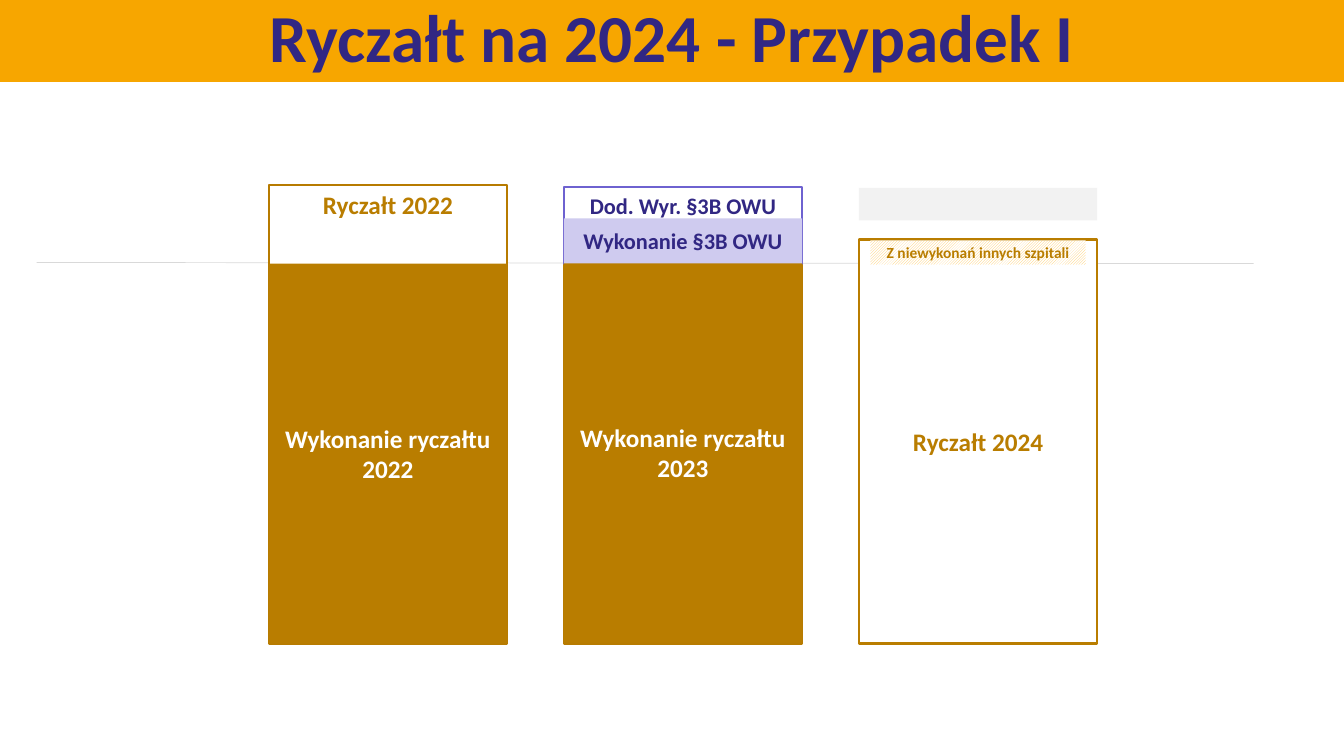
from lxml.etree import SubElement
from pptx import Presentation
from pptx.dml.color import RGBColor
from pptx.enum.dml import MSO_PATTERN
from pptx.enum.shapes import MSO_CONNECTOR, MSO_SHAPE
from pptx.enum.text import MSO_ANCHOR as Anchor, MSO_AUTO_SIZE, PP_ALIGN
from pptx.oxml.ns import qn
from pptx.util import Pt

EMU_PER_PX = 9525
WIDTH, HEIGHT = 1280, 720
FONT = "Calibri"
WHITE = RGBColor(0xFF, 0xFF, 0xFF)
ORANGE = RGBColor(0xF7, 0xA6, 0x00)
NAVY = RGBColor(0x31, 0x27, 0x83)
OCHRE = RGBColor(0xB9, 0x7D, 0x00)
OCHRE_EDGE = RGBColor(0xB7, 0x7B, 0x00)
VIOLET = RGBColor(0x6E, 0x62, 0xD0)
LILAC = RGBColor(0xCF, 0xCB, 0xEF)
HATCH = RGBColor(0xFF, 0xCB, 0x61)
PALE_GREY = RGBColor(0xF2, 0xF2, 0xF2)
RULE_GREY = RGBColor(0xD9, 0xD9, 0xD9)

COLUMN_LEFT, COLUMN_PITCH, COLUMN_WIDTH = 256, 281, 227
COLUMN_BOTTOM = 613
LEVEL = 251


def px(length):
    """Turn pixels into EMU."""
    return length * EMU_PER_PX


def write(shape, text, size, color, anchor):
    """Put one bold centred paragraph into a shape."""
    frame = shape.text_frame
    frame.word_wrap = True
    frame.auto_size = MSO_AUTO_SIZE.NONE
    frame.vertical_anchor = anchor
    paragraph = frame.paragraphs[0]
    paragraph.text = text
    paragraph.alignment = PP_ALIGN.CENTER
    font = paragraph.font
    font.name, font.size, font.bold = FONT, Pt(size), True
    font.color.rgb = color
    return paragraph


def add_block(slide, box, fill=None, edge=None, text="", size=18,
              color=WHITE, anchor=Anchor.MIDDLE):
    """Add a rectangle with optional fill, outline and label."""
    shape = slide.shapes.add_shape(MSO_SHAPE.RECTANGLE, *map(px, box))
    shape.shadow.inherit = False
    if fill is None:
        shape.fill.background()
    else:
        shape.fill.solid()
        shape.fill.fore_color.rgb = fill
    if edge is None:
        shape.line.fill.background()
    else:
        shape.line.color.rgb = edge
        shape.line.width = Pt(1.75)
    if text:
        write(shape, text, size, color, anchor)
    return shape


def add_title(slide, box):
    """Format the title placeholder as a coloured band."""
    title = slide.shapes.title
    title.left, title.top, title.width, title.height = map(px, box)
    title.fill.solid()
    title.fill.fore_color.rgb = ORANGE
    paragraph = write(title, "Ryczałt na 2024 - Przypadek I", 48, NAVY, Anchor.MIDDLE)
    paragraph.line_spacing = 0.9


def add_level_line(slide, left, right):
    """Draw the thin reference line behind the columns."""
    line = slide.shapes.add_connector(
        MSO_CONNECTOR.STRAIGHT, px(left), px(LEVEL - 1), px(right), px(LEVEL))
    line.line.color.rgb = RULE_GREY
    line.line.width = Pt(0.5)
    SubElement(line.element.spPr, qn("a:effectLst"))


def add_column_2022(slide, left, width, bottom):
    """Draw the 2022 lump sum and how much of it was used."""
    top = 176
    add_block(slide, (left, top, width, bottom - top), WHITE, OCHRE_EDGE,
              "Ryczałt 2022", color=OCHRE, anchor=Anchor.TOP)
    add_block(slide, (left, LEVEL, width, bottom - LEVEL), OCHRE,
              text="Wykonanie ryczałtu 2022")


def add_column_2023(slide, left, width, bottom):
    """Draw the 2023 use with the additional §3B parts on top."""
    top, used_top = 178, 208
    body = bottom - LEVEL
    add_block(slide, (left, LEVEL, width, body), edge=OCHRE_EDGE)
    add_block(slide, (left, top, width, LEVEL - top), WHITE, VIOLET,
              "Dod. Wyr. §3B OWU", 16, NAVY, Anchor.TOP)
    add_block(slide, (left, LEVEL - 1, width, body), OCHRE,
              text="Wykonanie ryczałtu 2023")
    add_block(slide, (left, used_top, width, LEVEL - used_top), LILAC,
              text="Wykonanie §3B OWU", size=16, color=NAVY)


def add_column_2024(slide, left, width, bottom):
    """Draw the 2024 lump sum with its hatched share from other hospitals."""
    top, margin = 228, 11
    add_block(slide, (left, top, width, bottom - top), WHITE, OCHRE,
              "Ryczałt 2024", color=OCHRE)
    add_block(slide, (left, 179, width, 31), PALE_GREY)
    share = add_block(slide, (left + margin, top + 1, width - 2 * margin, 23),
                      text="Z niewykonań innych szpitali", size=11, color=OCHRE)
    share.fill.patterned()
    share.fill.pattern = MSO_PATTERN.LIGHT_UPWARD_DIAGONAL
    share.fill.fore_color.rgb = HATCH
    share.fill.back_color.rgb = WHITE


def main():
    """Build the slide and save it."""
    presentation = Presentation()
    presentation.slide_width, presentation.slide_height = px(WIDTH), px(HEIGHT)
    slide = presentation.slides.add_slide(presentation.slide_layouts[5])
    add_title(slide, (0, 0, WIDTH, 78))
    add_level_line(slide, 35, 1194)
    for index, add_column in enumerate((add_column_2022, add_column_2023, add_column_2024)):
        add_column(slide, COLUMN_LEFT + index * COLUMN_PITCH, COLUMN_WIDTH, COLUMN_BOTTOM)
    presentation.save("out.pptx")


if __name__ == "__main__":
    main()
